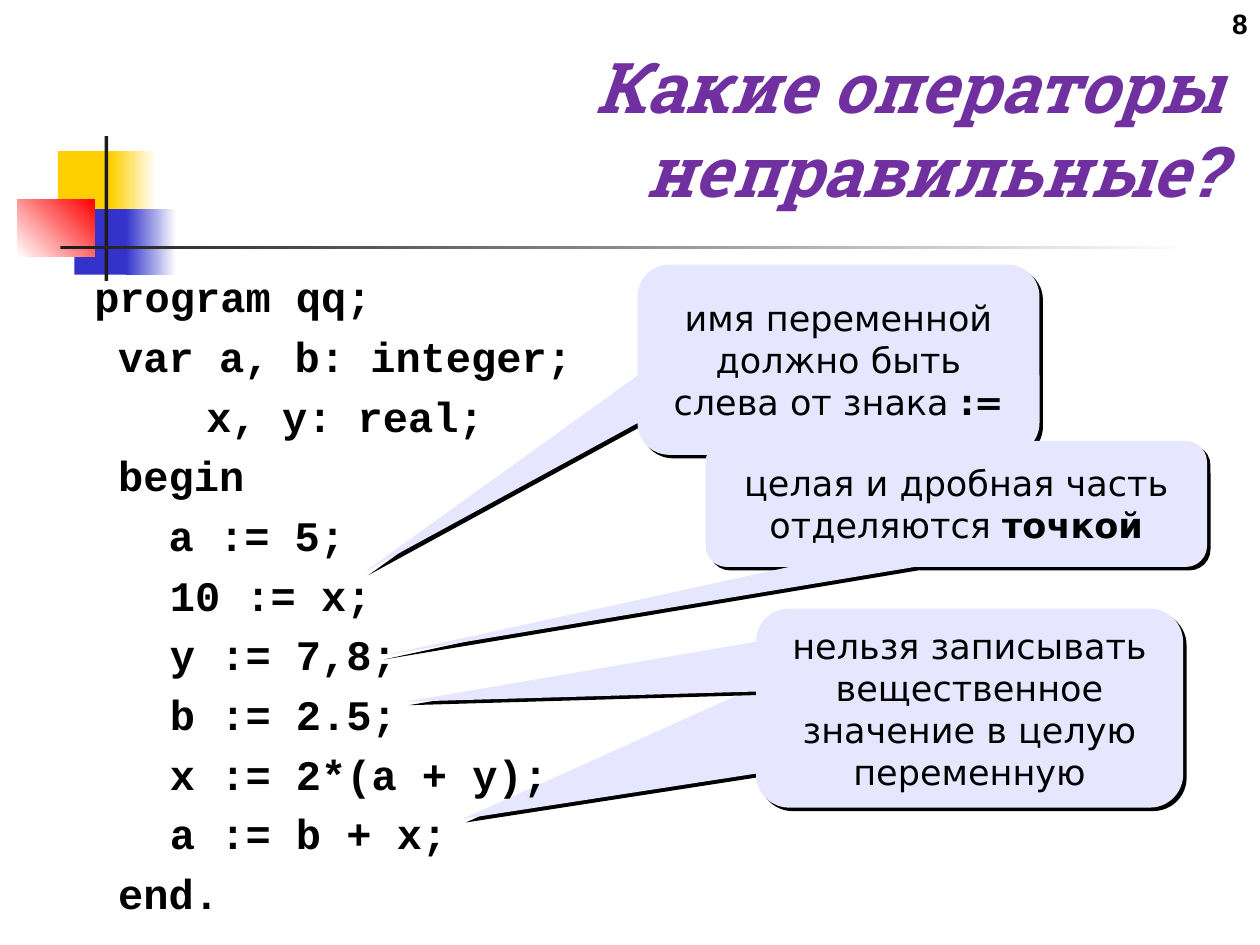
from lxml import etree
from pptx import Presentation
from pptx import util as u
from pptx.dml.color import RGBColor
from pptx.enum import shapes, text
from pptx.oxml.ns import qn

HUE = {"gold": "FFCF01", "blue": "3333CC", "red": "FF0000", "dark": "1C1C1C",
       "white": "FFFFFF", "black": "000000", "title": "7030A0", "note": "E6E6FF"}

# place, colours (two make a gradient), gradient angle
DECOR = [
    ((0.46, 1.2, 0.48, 0.52), ["gold"], 0),
    ((0.88, 1.2, 0.36, 0.52), ["gold", "white"], 0),
    ((0.59, 1.66, 0.46, 0.52), ["blue"], 0),
    ((1, 1.66, 0.4, 0.52), ["blue", "white"], 0),
    ((0.14, 1.58, 0.61, 0.46), ["white", "red"], 45),
    ((0.83, 1.08, 0.03, 1.15), ["dark"], 0),
    ((0.48, 1.95, 9, 0.03), ["dark", "white"], 0),
]
WEDGE = [(3.67, 6.5), (6.07, 5.42), (6.58, 6.05)]
# place, pointer offset, runs (text, bold)
NOTES = [
    ((5.06, 2.1, 3.19, 1.51), (-1.178, 1.114),
     [("имя переменной должно быть слева от знака ", False), (":=", True)]),
    ((5.6, 3.5, 3.98, 1), (-1.148, 1.207),
     [("целая и дробная часть отделяются ", False), ("точкой", True)]),
    ((6, 4.83, 3.39, 1.58), (-1.321, -0.032),
     [("нельзя записывать вещественное значение в целую переменную", False)]),
]
CODE = ["program qq;", "\tvar a, b: integer;", "\t\t x, y: real;", "\tbegin",
        "\t  a := 5;", "   10 := x;", "   y := 7,8;", "   b := 2.5;",
        "   x := 2*(a + y);", "   a := b + x;", "\tend."]

deck = Presentation()
deck.slide_width, deck.slide_height = u.Inches(10), u.Inches(7.5)
slide = deck.slides.add_slide(deck.slide_layouts[6])


def rgb(name):
    return RGBColor.from_string(HUE[name])


def inch(place):
    return [u.Inches(v) for v in place]


def paint(shape, hues, angle=0):
    shape.shadow.inherit = False
    shape.line.fill.background()
    if len(hues) == 1:
        shape.fill.solid()
        shape.fill.fore_color.rgb = rgb(hues[0])
        return
    shape.fill.gradient()
    shape.fill.gradient_angle = angle
    for stop, hue in zip(shape.fill.gradient_stops, hues):
        stop.color.rgb = rgb(hue)


def shade(shape):
    """Add a hard black shadow towards the lower right."""
    effects = shape._element.spPr.find(qn("a:effectLst"))
    drop = etree.SubElement(effects, qn("a:outerShdw"), blurRad="0",
                            dist=str(u.Pt(2.8)), dir=str(45 * 60000),
                            algn="ctr", rotWithShape="0")
    etree.SubElement(drop, qn("a:srgbClr"), val=HUE["black"])


def write(shape, paras, font, size, hue="black", align="l", italic=False,
          anchor=text.MSO_ANCHOR.TOP, before=0, hang=0):
    """Fill a shape with paragraphs, each a list of (text, bold) runs."""
    frame = shape.text_frame
    frame.word_wrap = True
    frame.vertical_anchor = anchor
    for i, runs in enumerate(paras):
        para = frame.add_paragraph() if i else frame.paragraphs[0]
        para.alignment = {"l": text.PP_ALIGN.LEFT, "c": text.PP_ALIGN.CENTER,
                          "r": text.PP_ALIGN.RIGHT}[align]
        para.space_before = u.Pt(before)
        if hang:
            props = para._p.get_or_add_pPr()
            props.set("marL", str(u.Inches(hang)))
            props.set("indent", str(-u.Inches(hang)))
        for words, bold in runs:
            run = para.add_run()
            run.text = words
            run.font.name, run.font.size = font, u.Pt(size)
            run.font.bold, run.font.italic = bold, italic
            run.font.color.rgb = rgb(hue)


def box(place, paras, font, size, **style):
    write(slide.shapes.add_textbox(*inch(place)), paras, font, size, **style)


for place, hues, angle in DECOR:
    bar = slide.shapes.add_shape(shapes.MSO_SHAPE.RECTANGLE, *inch(place))
    paint(bar, hues, angle)

start, *rest = [inch(point) for point in WEDGE]
path = slide.shapes.build_freeform(*start)
path.add_line_segments(rest, close=True)
wedge = path.convert_to_shape()
paint(wedge, ["note"])
shade(wedge)

box((7.67, 0, 2.33, 0.52), [[("8", True)]], "Arial", 16, align="r")
box((2, 0.3, 7.8, 1.45), [[("Какие операторы неправильные?", True)]],
    "Roboto Slab", 40, hue="title", align="r", italic=True)

for place, tip, runs in NOTES:
    note = slide.shapes.add_shape(
        shapes.MSO_SHAPE.ROUNDED_RECTANGULAR_CALLOUT, *inch(place))
    for i, value in enumerate((*tip, 0.167)):
        note.adjustments[i] = value
    paint(note, ["note"])
    shade(note)
    write(note, [runs], "DejaVu Sans", 20, align="c",
          anchor=text.MSO_ANCHOR.MIDDLE)

box((0.65, 2.1, 5, 5.15), [[(line, True)] for line in CODE],
    "Courier New", 24, before=5.3, hang=0.19)

deck.save("out.pptx")
